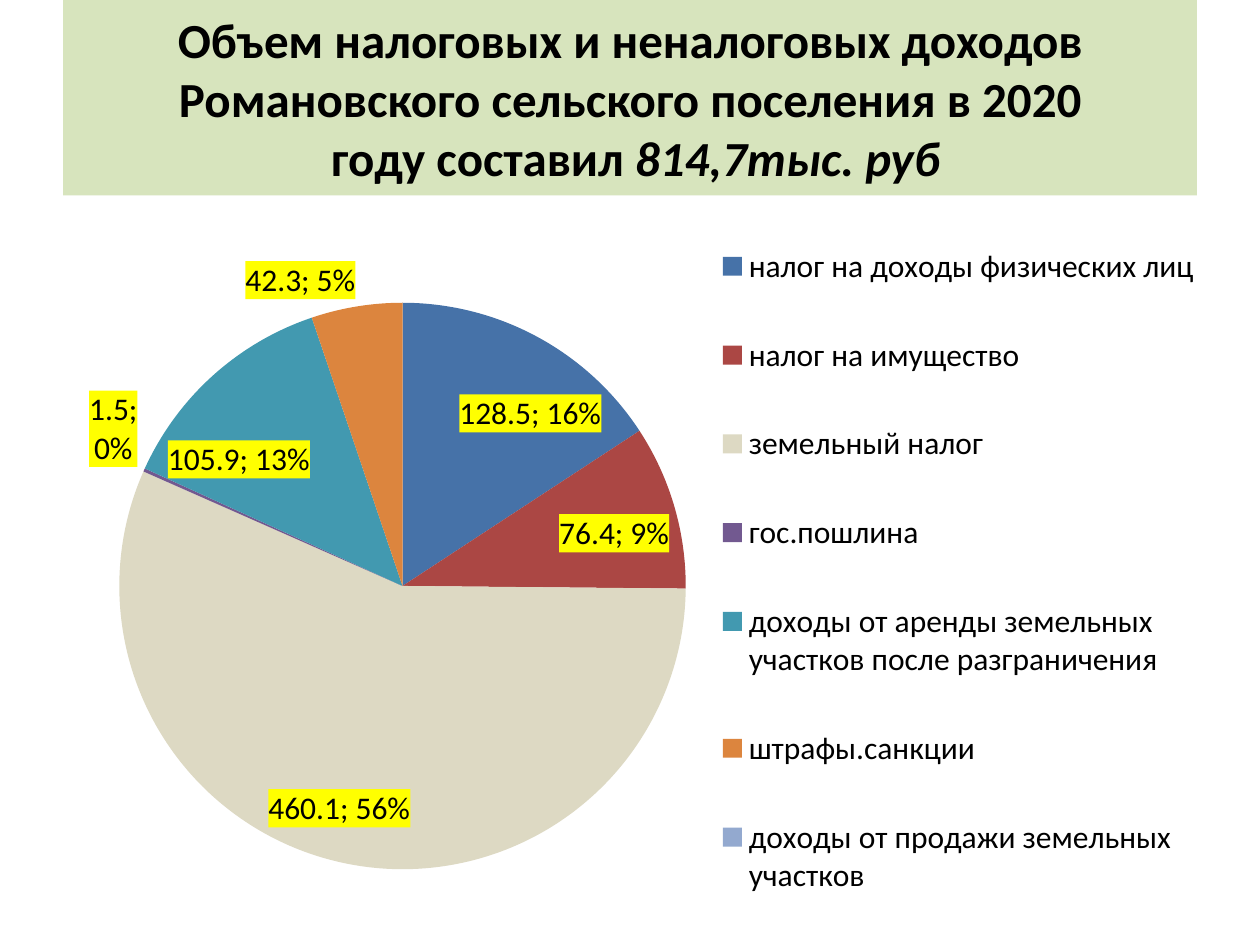
from lxml import etree
from pptx import Presentation
from pptx.chart.data import CategoryChartData
from pptx.dml.color import RGBColor
from pptx.enum.chart import XL_CHART_TYPE as ChartType
from pptx.enum.chart import XL_LABEL_POSITION as LabelPosition
from pptx.enum.chart import XL_LEGEND_POSITION as LegendPosition
from pptx.enum.text import MSO_ANCHOR as Anchor
from pptx.enum.text import MSO_AUTO_SIZE as AutoSize
from pptx.enum.text import PP_ALIGN as Align
from pptx.oxml import parse_xml
from pptx.oxml.ns import nsdecls, qn
from pptx.util import Inches, Pt

TITLE = "Объем налоговых и неналоговых доходов Романовского сельского поселения в 2020"
TITLE_END = " году составил "
TOTAL = "814,7тыс. руб"

INCOME = [
    ("налог на доходы физических лиц", 128.5, "4672A8"),
    ("налог на имущество", 76.4, "AB4744"),
    ("земельный налог", 460.1, "DDD9C3"),
    ("гос.пошлина", 1.5, "725990"),
    ("доходы от аренды земельных участков после разграничения", 105.9, "4299B0"),
    ("штрафы.санкции", 42.3, "DC853E"),
    ("доходы от продажи земельных участков", 0, "93A9CF"),
]


def colour(value):
    return RGBColor.from_string(value)


def apply(target, values):
    for name, value in values.items():
        setattr(target, name, value)


def place(parent, index, percents, inner=False):
    for old in parent.findall(qn("c:layout")):
        parent.remove(old)
    layout = etree.Element(qn("c:layout"))
    manual = etree.SubElement(layout, qn("c:manualLayout"))
    settings = [("layoutTarget", "inner")] if inner else []
    settings += [("xMode", "edge"), ("yMode", "edge")]
    settings += [(tag, percent / 100) for tag, percent in zip("xywh", percents)]
    for tag, value in settings:
        etree.SubElement(manual, qn(f"c:{tag}")).set("val", str(value))
    parent.insert(index, layout)


class IncomeSlide:
    font = "Calibri"
    ink = "000000"
    banner = "D7E4BD"
    marker = "FFFF00"

    def __init__(self, width, height):
        self.deck = Presentation()
        apply(self.deck, {"slide_width": Inches(width), "slide_height": Inches(height)})
        self.slide = self.deck.slides.add_slide(self.deck.slide_layouts[5])

    def box(self, *percents):
        sides = (self.deck.slide_width, self.deck.slide_height) * 2
        return [int(side * percent / 100) for side, percent in zip(sides, percents)]

    def style(self, font, size, **extra):
        apply(font, {"name": self.font, "size": Pt(size), **extra})
        font.color.rgb = colour(self.ink)

    def title(self, percents, opening, ending, total):
        heading = self.slide.shapes.title
        apply(heading, dict(zip(("left", "top", "width", "height"), self.box(*percents))))
        heading.fill.solid()
        heading.fill.fore_color.rgb = colour(self.banner)
        apply(heading.text_frame, {
            "word_wrap": True, "auto_size": AutoSize.NONE, "vertical_anchor": Anchor.MIDDLE})
        line = heading.text_frame.paragraphs[0]
        line.alignment = Align.CENTER
        for words, italic in ((opening, False), (ending, False), (total, True)):
            if words == ending:
                line.add_line_break()
            run = line.add_run()
            run.text = words
            self.style(run.font, 28, bold=True, italic=italic)

    def pie(self, percents, rows, plot_percents, legend_percents):
        names, amounts, fills = zip(*rows)
        data = CategoryChartData()
        data.categories = names
        data.add_series("Series 1", amounts)
        chart = self.slide.shapes.add_chart(ChartType.PIE, *self.box(*percents), data).chart
        apply(chart, {"has_title": False, "has_legend": True})
        self.style(chart.font, 18)
        apply(chart.legend, {"position": LegendPosition.RIGHT, "include_in_layout": False})
        pie = chart.plots[0]
        pie.vary_by_categories = True
        series = pie.series[0]
        for index, fill in enumerate(fills):
            slice_fill = series.points[index].format.fill
            slice_fill.solid()
            slice_fill.fore_color.rgb = colour(fill)
        self.labels(series.data_labels, amounts.index(0))
        area = chart.element.find(".//" + qn("c:plotArea"))
        place(area, 0, plot_percents, inner=True)
        place(area.getparent().find(qn("c:legend")), 1, legend_percents)

    def labels(self, labels, hidden):
        apply(labels, {
            "show_value": True, "show_percentage": True, "position": LabelPosition.BEST_FIT})
        self.style(labels.font, 18)
        root = labels.font._element.getparent().getparent().getparent().getparent()
        root.find(qn("c:txPr")).addprevious(parse_xml(
            f'<c:spPr {nsdecls("c", "a")}><a:solidFill><a:srgbClr val="{self.marker}"/>'
            "</a:solidFill></c:spPr>"))
        separator = etree.Element(qn("c:separator"))
        separator.text = "; "
        last_flag = root.find(qn("c:showBubbleSize"))
        if last_flag is None:
            last_flag = root.find(qn("c:showPercent"))
        last_flag.addnext(separator)
        root.insert(0, parse_xml(
            f'<c:dLbl {nsdecls("c")}><c:idx val="{hidden}"/><c:delete val="1"/></c:dLbl>'))


def main():
    page = IncomeSlide(10, 7.5)
    page.title((5, 0, 90, 20.67), TITLE, TITLE_END, TOTAL)
    page.pie((5.5, 20.8, 90.6, 79.2), INCOME, (2.1, 14.2, 54.2, 75.7), (56.4, 0, 43, 100))
    page.deck.save("out.pptx")


if __name__ == "__main__":
    main()
